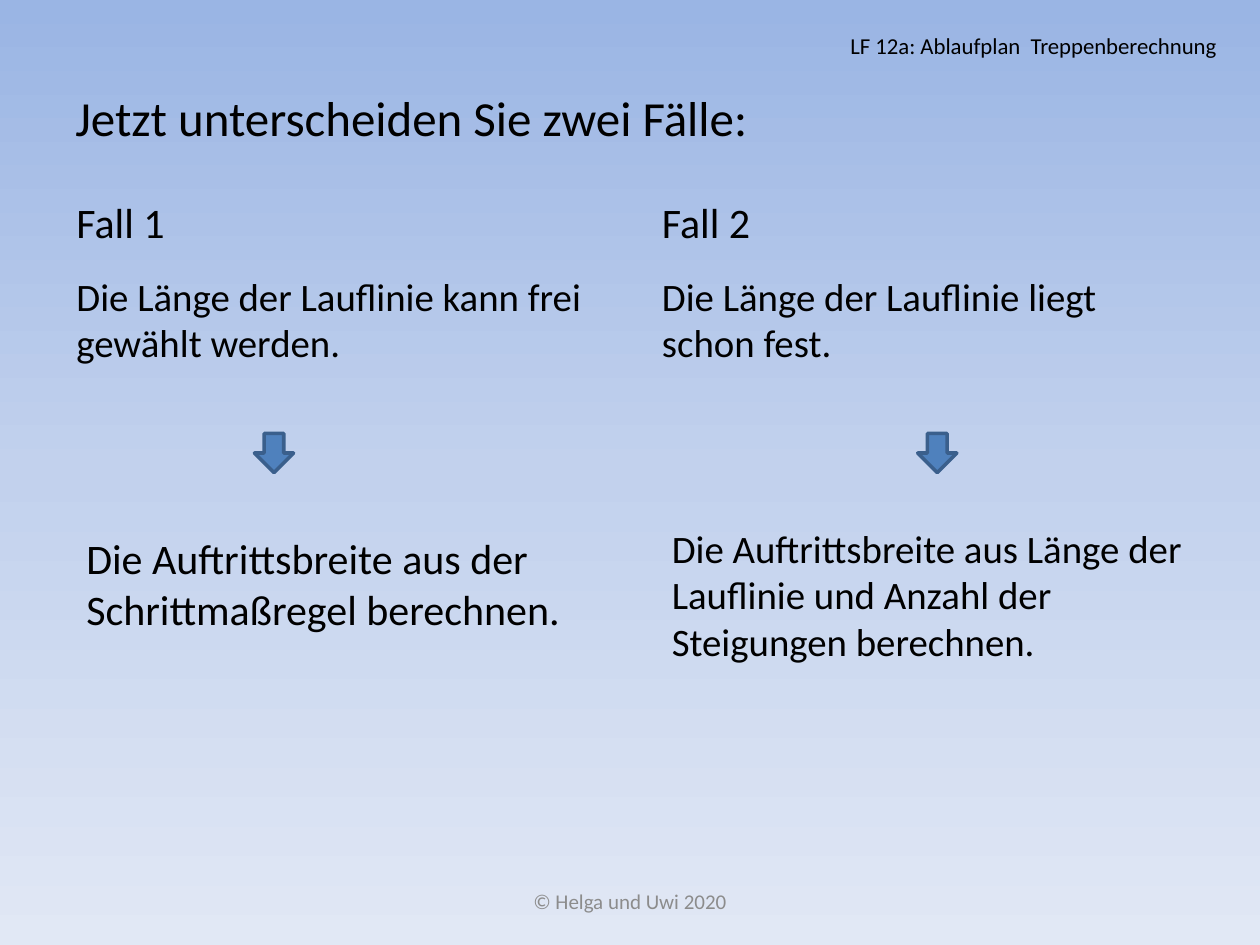
from copy import deepcopy

from pptx import Presentation
from pptx.dml.color import RGBColor
from pptx.enum.shapes import MSO_SHAPE
from pptx.enum.text import MSO_ANCHOR, MSO_AUTO_SIZE, PP_ALIGN
from pptx.oxml.ns import qn
from pptx.util import Pt

FONT = "Calibri"
BLACK = RGBColor(0x00, 0x00, 0x00)
GRAY = RGBColor(0x8C, 0x8C, 0x8C)
ARROW_FILL = RGBColor(0x4F, 0x81, 0xBD)
ARROW_LINE = RGBColor(0x3A, 0x5F, 0x8C)
SKY = (
    (0, RGBColor(0x9A, 0xB5, 0xE4)),
    (0.5, RGBColor(0xC2, 0xD1, 0xED)),
    (1, RGBColor(0xE1, 0xE8, 0xF5)),
)

CASES = (
    (36.6, 145.4, "Fall 1", "Die Länge der Lauflinie kann frei gewählt werden.",
     "Die Auftrittsbreite aus der Schrittmaßregel berechnen.", 24, 67.6),
    (371.2, 524.4, "Fall 2", "Die Länge der Lauflinie liegt schon fest.",
     "Die Auftrittsbreite aus Länge der Lauflinie und Anzahl der Steigungen berechnen.",
     22.2, 85),
)


def set_background(s):
    fill = s.background.fill
    fill.gradient()
    stops = s.element.find(".//" + qn("a:gsLst"))
    stops.append(deepcopy(stops[-1]))
    fill.gradient_angle = 270
    for stop, (position, color) in zip(fill.gradient_stops, SKY):
        stop.position = position
        stop.color.rgb = color


def add_text(s, text, x, y, w, h, size, anchor=MSO_ANCHOR.BOTTOM,
             color=BLACK, align=PP_ALIGN.LEFT):
    tf = s.shapes.add_textbox(Pt(x), Pt(y), Pt(w), Pt(h)).text_frame
    tf.word_wrap = True
    tf.vertical_anchor = anchor
    p = tf.paragraphs[0]
    p.alignment = align
    r = p.add_run()
    r.text = text
    r.font.name = FONT
    r.font.size = Pt(size)
    r.font.color.rgb = color
    return tf


def add_arrow(s, x, y, size):
    sp = s.shapes.add_shape(MSO_SHAPE.DOWN_ARROW, Pt(x), Pt(y), Pt(size), Pt(size))
    sp.shadow.inherit = False
    sp.fill.solid()
    sp.fill.fore_color.rgb = ARROW_FILL
    sp.line.color.rgb = ARROW_LINE
    sp.line.width = Pt(2)


def add_case(s, x, arrow_x, heading, condition, result, result_size, result_height):
    add_text(s, heading, x, 94.4, 85, 50.4, 24)
    add_text(s, condition, x, 162, 318.2, 50.4, 22.2)
    add_arrow(s, arrow_x, 247.7, 22.4)
    add_text(s, result, x + 5.6, 298.1, 318.2, result_height, result_size)


def main():
    prs = Presentation()
    prs.slide_width, prs.slide_height = Pt(720), Pt(540)
    s = prs.slides.add_slide(prs.slide_layouts[6])
    set_background(s)
    add_text(s, "Jetzt unterscheiden Sie zwei Fälle:", 36, 21.6, 648, 90, 28,
             MSO_ANCHOR.MIDDLE)
    for case in CASES:
        add_case(s, *case)
    add_text(s, "© Helga und Uwi 2020", 246, 500.5, 228, 28.8, 12,
             MSO_ANCHOR.MIDDLE, GRAY, PP_ALIGN.CENTER)
    header = add_text(s, "LF 12a: Ablaufplan  Treppenberechnung", 478.8, 14.4, 232, 23,
                      13, MSO_ANCHOR.TOP)
    header.auto_size = MSO_AUTO_SIZE.SHAPE_TO_FIT_TEXT
    prs.save("out.pptx")


if __name__ == "__main__":
    main()
